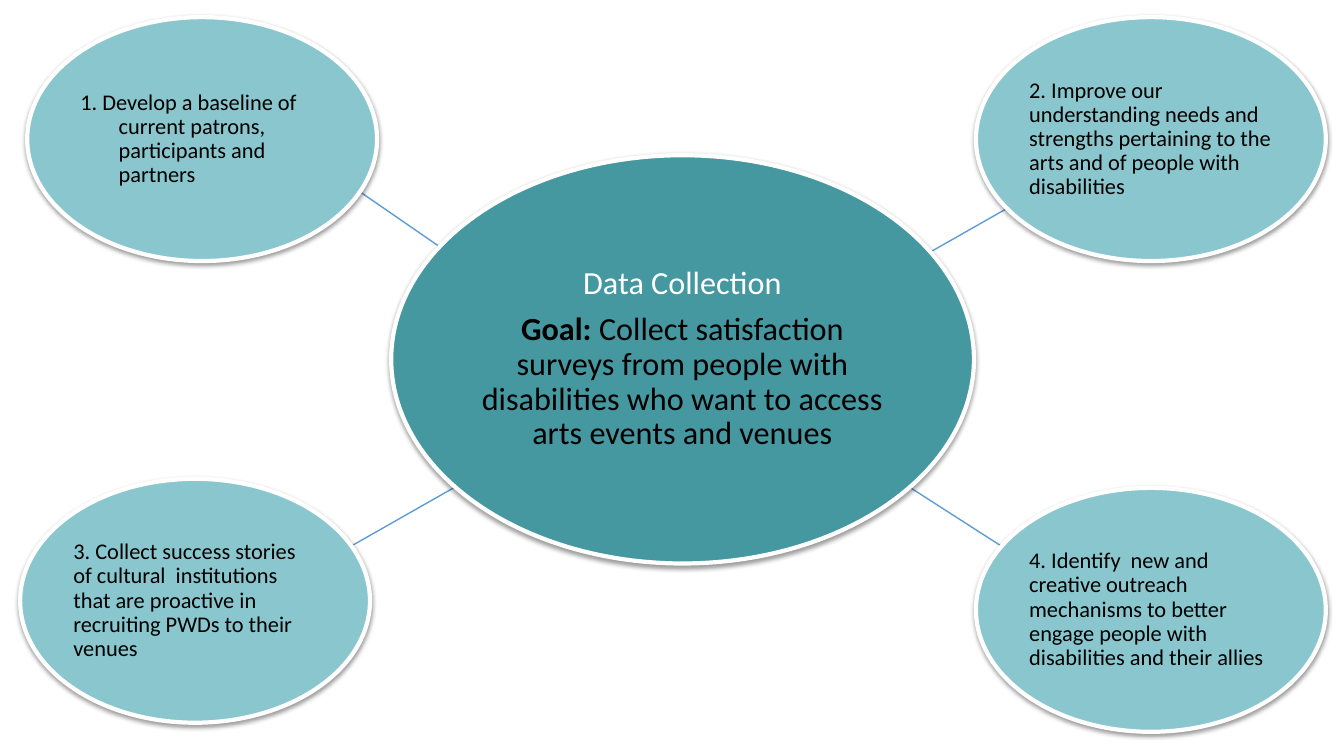
from lxml import etree
from pptx import Presentation
from pptx import util as u
from pptx.dml.color import RGBColor
from pptx.enum import shapes, text
from pptx.oxml import parse_xml
from pptx.oxml.ns import nsdecls, qn

SHADOW = (
    f'<a:effectLst {nsdecls("a")}>'
    '<a:outerShdw blurRad="39370" dist="20320" dir="5400000" rotWithShape="0">'
    '<a:srgbClr val="000000"><a:alpha val="38000"/></a:srgbClr>'
    '</a:outerShdw></a:effectLst>'
)


def color(hex_value):
    return RGBColor.from_string(hex_value)


class GoalMap:
    font = "Calibri"
    hub_fill = "4597A0"
    goal_fill = "8AC6CD"
    outline = "FFFFFF"
    spoke = "5F9CD5"
    ink = "000000"
    light = "FFFFFF"

    def __init__(self, slide):
        self.slide = slide

    def add_spoke(self, x1, y1, x2, y2):
        line = self.slide.shapes.add_connector(
            shapes.MSO_CONNECTOR.STRAIGHT,
            u.Inches(x1), u.Inches(y1), u.Inches(x2), u.Inches(y2))
        line.line.color.rgb = color(self.spoke)
        line.line.width = u.Pt(1)
        etree.SubElement(line._element.spPr, qn("a:effectLst"))

    def add_oval(self, x, y, w, h, fill):
        sp = self.slide.shapes.add_shape(
            shapes.MSO_SHAPE.OVAL,
            u.Inches(x), u.Inches(y), u.Inches(w), u.Inches(h))
        sp.fill.solid()
        sp.fill.fore_color.rgb = color(fill)
        sp.line.color.rgb = color(self.outline)
        sp.line.width = u.Pt(3)
        sp._element.spPr.append(parse_xml(SHADOW))
        tf = sp.text_frame
        tf.word_wrap = True
        tf.vertical_anchor = text.MSO_ANCHOR.MIDDLE
        tf.margin_left = tf.margin_right = u.Inches(0.02)
        tf.margin_top = tf.margin_bottom = 0
        return tf

    def format_paragraph(self, p, align):
        p.alignment = align
        p.line_spacing = 0.9

    def add_run(self, p, words, size, ink, bold=False):
        r = p.add_run()
        r.text = words
        r.font.name = self.font
        r.font.size = u.Pt(size)
        r.font.bold = bold
        r.font.color.rgb = color(ink)

    def add_goal(self, x, y, words, hanging=0):
        tf = self.add_oval(x, y, 3.47, 2.42, self.goal_fill)
        p = tf.paragraphs[0]
        self.format_paragraph(p, text.PP_ALIGN.LEFT)
        if hanging:
            pPr = p._p.get_or_add_pPr()
            pPr.set("marL", str(u.Inches(hanging)))
            pPr.set("indent", str(-u.Inches(hanging)))
        self.add_run(p, words, 16, self.ink)

    def add_hub(self, x, y, heading, label, goal):
        tf = self.add_oval(x, y, 5.78, 4.05, self.hub_fill)
        p = tf.paragraphs[0]
        self.format_paragraph(p, text.PP_ALIGN.CENTER)
        p.space_after = u.Pt(8)
        self.add_run(p, heading, 23, self.light)
        p = tf.add_paragraph()
        self.format_paragraph(p, text.PP_ALIGN.CENTER)
        self.add_run(p, label, 23, self.ink, bold=True)
        self.add_run(p, goal, 23, self.ink)


SPOKES = [
    (10.2, 5.59, 8.72, 4.64),
    (4.77, 2.73, 3.32, 1.73),
    (10.23, 1.93, 8.7, 2.8),
    (4.64, 4.76, 3.11, 5.63),
]
GOALS = [
    (0.27, 0.17, "1. Develop a baseline of current patrons, participants "
                 "and partners", 0.38),
    (9.68, 0.17, "2. Improve our understanding needs and strengths "
                 "pertaining to the arts and of people with disabilities", 0),
    (0.2, 4.75, "3. Collect success stories of cultural  institutions that "
                "are proactive in recruiting PWDs to their venues", 0),
    (9.68, 4.84, "4. Identify  new and creative outreach  mechanisms to "
                 "better engage people with disabilities and their allies", 0),
]


def main():
    prs = Presentation()
    prs.slide_width = u.Inches(13.33)
    prs.slide_height = u.Inches(7.5)
    goal_map = GoalMap(prs.slides.add_slide(prs.slide_layouts[6]))
    for spoke in SPOKES:
        goal_map.add_spoke(*spoke)
    goal_map.add_hub(
        3.88, 1.54, "Data Collection", "Goal: ",
        "Collect satisfaction surveys from people with disabilities "
        "who want to access arts events and venues")
    for goal in GOALS:
        goal_map.add_goal(*goal)
    prs.save("out.pptx")


if __name__ == "__main__":
    main()
